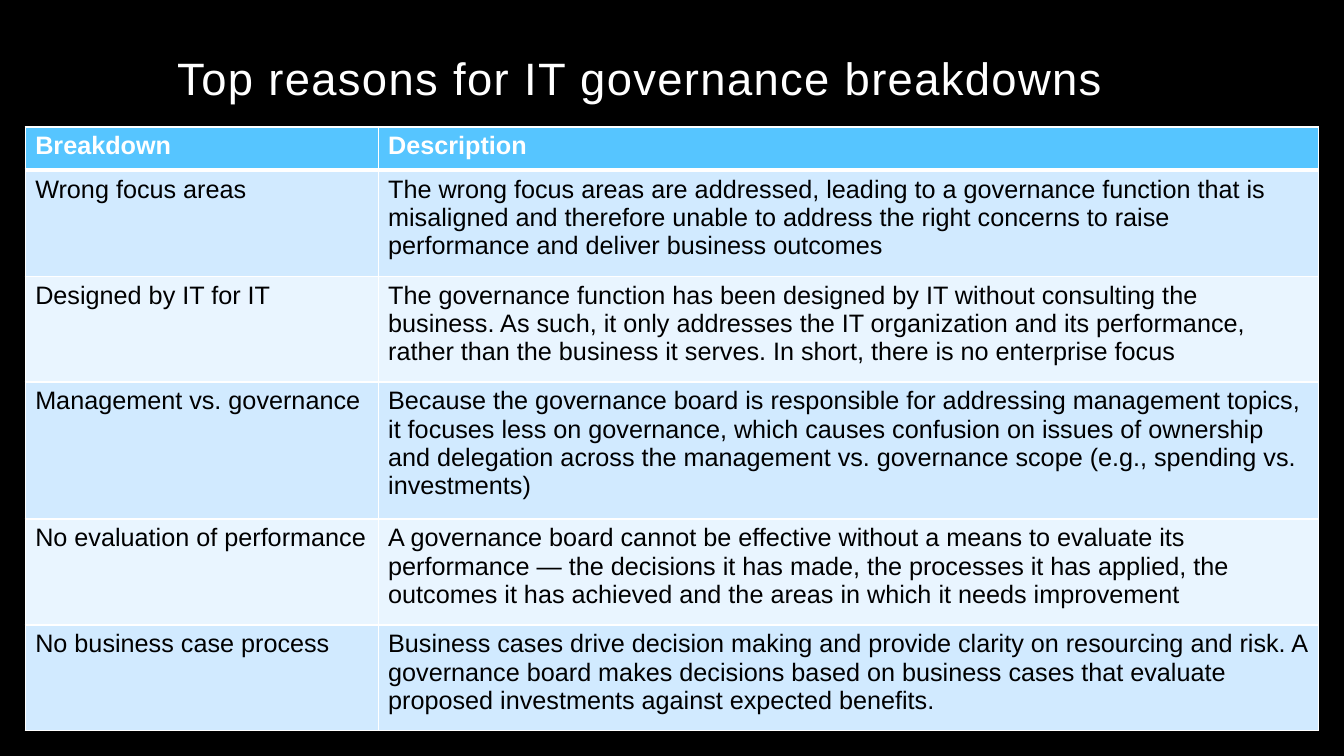
from lxml import etree
from pptx import Presentation
from pptx import util as u
from pptx.dml.color import RGBColor
from pptx.enum import text
from pptx.oxml import ns

HUES = {"back": "000000", "ink": "000000", "white": "FFFFFF",
        "head": "56C5FF", "odd": "D1EAFF", "even": "E9F5FF"}
COLS = [3.5, 9.33]
HEIGHTS = [0.43, 1.05, 1.05, 1.36, 1.05, 1.05]
ROWS = [
    ("Breakdown", "Description"),
    ("Wrong focus areas",
     "The wrong focus areas are addressed, leading to a governance function that is "
     "misaligned and therefore unable to address the right concerns to raise "
     "performance and deliver business outcomes"),
    ("Designed by IT for IT",
     "The governance function has been designed by IT without consulting the business. "
     "As such, it only addresses the IT organization and its performance, rather than "
     "the business it serves. In short, there is no enterprise focus"),
    ("Management vs. governance",
     "Because the governance board is responsible for addressing management topics, it "
     "focuses less on governance, which causes confusion on issues of ownership and "
     "delegation across the management vs. governance scope (e.g., spending vs. "
     "investments)"),
    ("No evaluation of performance",
     "A governance board cannot be effective without a means to evaluate its\n"
     "performance — the decisions it has made, the processes it has applied, the "
     "outcomes it has achieved and the areas in which it needs improvement"),
    ("No business case process",
     "Business cases drive decision making and provide clarity on resourcing and risk. "
     "A governance board makes decisions based on business cases that evaluate "
     "proposed investments against expected benefits."),
]


def hue(name):
    return RGBColor.from_string(HUES[name])


def style(run, size, color, bold=False):
    form = {"name": "Arial", "size": u.Pt(size), "bold": bold}
    for key, value in form.items():
        setattr(run.font, key, value)
    run.font.color.rgb = hue(color)


def edge(cell, widths):
    """Draw white cell borders; widths are points for left, right, top, bottom."""
    props = cell._tc.get_or_add_tcPr()
    for spot, (side, width) in enumerate(zip("LRTB", widths)):
        line = etree.Element(ns.qn(f"a:ln{side}"), w=str(u.Pt(width)))
        fill = etree.SubElement(line, ns.qn("a:solidFill"))
        etree.SubElement(fill, ns.qn("a:srgbClr"), val=HUES["white"])
        props.insert(spot, line)


def add_title(slide, box):
    frame = slide.shapes.add_textbox(*map(u.Inches, box)).text_frame
    frame.word_wrap = True
    frame.vertical_anchor = text.MSO_ANCHOR.BOTTOM
    para = frame.paragraphs[0]
    para.line_spacing = 0.9
    run = para.add_run()
    run.text = "Top reasons for IT governance breakdowns"
    style(run, 32.4, "white")
    run.font._element.set("spc", "100")


def add_grid(slide, box):
    grid = slide.shapes.add_table(len(ROWS), len(COLS), *map(u.Inches, box)).table
    for col, width in zip(grid.columns, COLS):
        col.width = u.Inches(width)
    for row, height in zip(grid.rows, HEIGHTS):
        row.height = u.Inches(height)
    for r, words in enumerate(ROWS):
        shade = "head" if r == 0 else "odd" if r % 2 else "even"
        for c, word in enumerate(words):
            cell = grid.cell(r, c)
            cell.text = word
            cell.fill.solid()
            cell.fill.fore_color.rgb = hue(shade)
            edge(cell, (1, 1, 3 if r == 1 else 1, 3 if r == 0 else 1))
            for para in cell.text_frame.paragraphs:
                for run in para.runs:
                    style(run, 18, "ink" if r else "white", r == 0)


def main():
    deck = Presentation()
    deck.slide_width, deck.slide_height = u.Inches(13.33), u.Inches(7.5)
    slide = deck.slides.add_slide(deck.slide_layouts[6])
    slide.background.fill.solid()
    slide.background.fill.fore_color.rgb = hue("back")
    add_grid(slide, (0.25, 1.26, sum(COLS), sum(HEIGHTS)))
    add_title(slide, (1.66, 0.42, 10, 0.67))
    deck.save("out.pptx")


if __name__ == "__main__":
    main()
